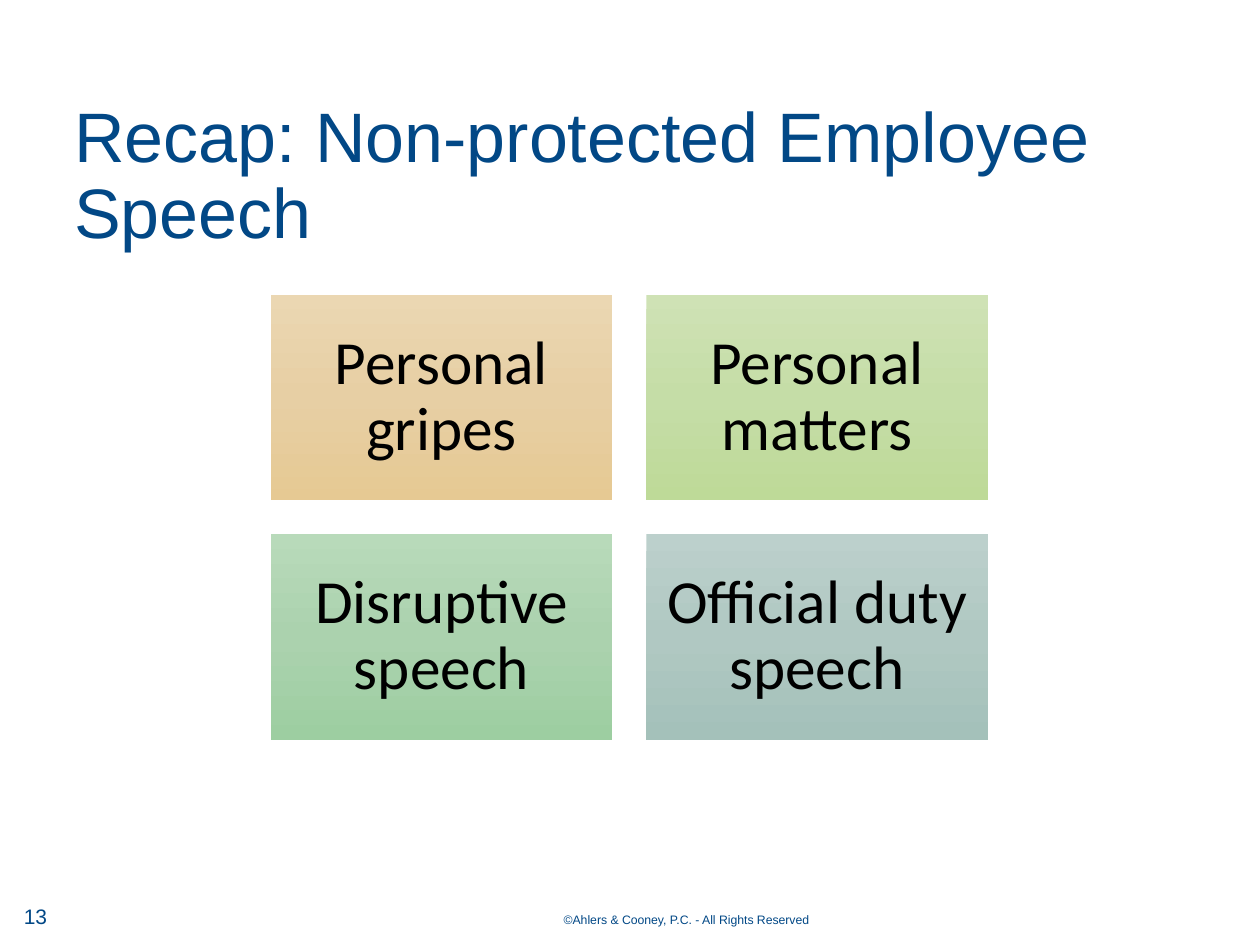
from copy import deepcopy

from pptx import Presentation
from pptx.dml.color import RGBColor
from pptx.enum.shapes import MSO_SHAPE
from pptx.enum.text import MSO_ANCHOR, MSO_AUTO_SIZE, PP_ALIGN
from pptx.util import Inches, Pt

RECTANGLE = MSO_SHAPE.RECTANGLE
TOP, MIDDLE = MSO_ANCHOR.TOP, MSO_ANCHOR.MIDDLE
LEFT, CENTER, RIGHT = PP_ALIGN.LEFT, PP_ALIGN.CENTER, PP_ALIGN.RIGHT

# Content
TITLE = "Recap: Non-protected Employee Speech"
PAGE_NUMBER = "13"
COPYRIGHT = "©Ahlers & Cooney, P.C. - All Rights Reserved"
CARDS = [
    ("Personal gripes", "sand"),
    ("Personal matters", "lime"),
    ("Disruptive speech", "green"),
    ("Official duty speech", "teal"),
]

COLOURS = {"navy": "024886", "black": "000000"}
GRADIENTS = {
    "sand": ("EBD7B2", "E7CFA4", "E6C993"),
    "lime": ("CFE2B5", "C5DDA7", "BEDA98"),
    "green": ("B8DABA", "ABD2AE", "9DCEA1"),
    "teal": ("BCD0CC", "B0C8C2", "A4C1BA"),
}

# Card grid, in inches
COLUMNS = 2
GRID_LEFT, GRID_TOP = 2.15, 2.34
CARD_WIDTH, CARD_HEIGHT = 2.71, 1.63
GAP = 0.27
CARD_INSET = 0.15

# Text formats
TITLE_FORMAT = {"name": "Arial", "size": Pt(40)}
NUMBER_FORMAT = {"name": "Arial", "size": Pt(12)}
COPYRIGHT_FORMAT = {"name": "Arial", "size": Pt(7)}
CARD_FORMAT = {"name": "Calibri", "size": Pt(35)}


def write(box, text, font, colour, align=LEFT, anchor=MIDDLE, spacing=1.0):
    frame = box.text_frame
    frame.text = text
    frame.word_wrap = True
    frame.auto_size = MSO_AUTO_SIZE.NONE
    frame.vertical_anchor = anchor
    para = frame.paragraphs[0]
    para.alignment = align
    para.line_spacing = spacing
    span = para.runs[0]
    for name, value in font.items():
        setattr(span.font, name, value)
    span.font.color.rgb = RGBColor.from_string(COLOURS[colour])


def fill_gradient(shape, colours):
    fill = shape.fill
    fill.gradient()
    fill.gradient_angle = 270
    # The default gradient has two stops; add one between them
    first = shape._element.spPr.find(".//{*}gs")
    first.addnext(deepcopy(first))
    for index, (stop, colour) in enumerate(zip(fill.gradient_stops, colours)):
        stop.position = index / (len(colours) - 1)
        stop.color.rgb = RGBColor.from_string(colour)


def add_card(page, index, text, gradient):
    row, column = divmod(index, COLUMNS)
    card = page.shapes.add_shape(
        RECTANGLE,
        Inches(GRID_LEFT + column * (CARD_WIDTH + GAP)),
        Inches(GRID_TOP + row * (CARD_HEIGHT + GAP)),
        Inches(CARD_WIDTH),
        Inches(CARD_HEIGHT),
    )
    card.shadow.inherit = False
    card.line.fill.background()
    fill_gradient(card, GRADIENTS[gradient])
    for side in ("left", "top", "right", "bottom"):
        setattr(card.text_frame, f"margin_{side}", Inches(CARD_INSET))
    write(card, text, CARD_FORMAT, "black", CENTER, spacing=0.9)


def main():
    deck = Presentation()
    deck.slide_width, deck.slide_height = Inches(10), Inches(7.5)
    page = deck.slides.add_slide(deck.slide_layouts[5])

    # Title
    title = page.shapes.title
    title.left, title.top = Inches(0.49), Inches(0.86)
    title.width, title.height = Inches(9.24), Inches(1.1)
    write(title, TITLE, TITLE_FORMAT, "navy", spacing=0.9)

    # Cards
    for index, (text, gradient) in enumerate(CARDS):
        add_card(page, index, text, gradient)

    # Footer
    number = page.shapes.add_textbox(Inches(0.09), Inches(7.07), Inches(2.25), Inches(0.4))
    write(number, PAGE_NUMBER, NUMBER_FORMAT, "navy")
    notice = page.shapes.add_textbox(Inches(3.87), Inches(7.19), Inches(2.65), Inches(0.3))
    write(notice, COPYRIGHT, COPYRIGHT_FORMAT, "navy", RIGHT, TOP)

    deck.save("out.pptx")


if __name__ == "__main__":
    main()
